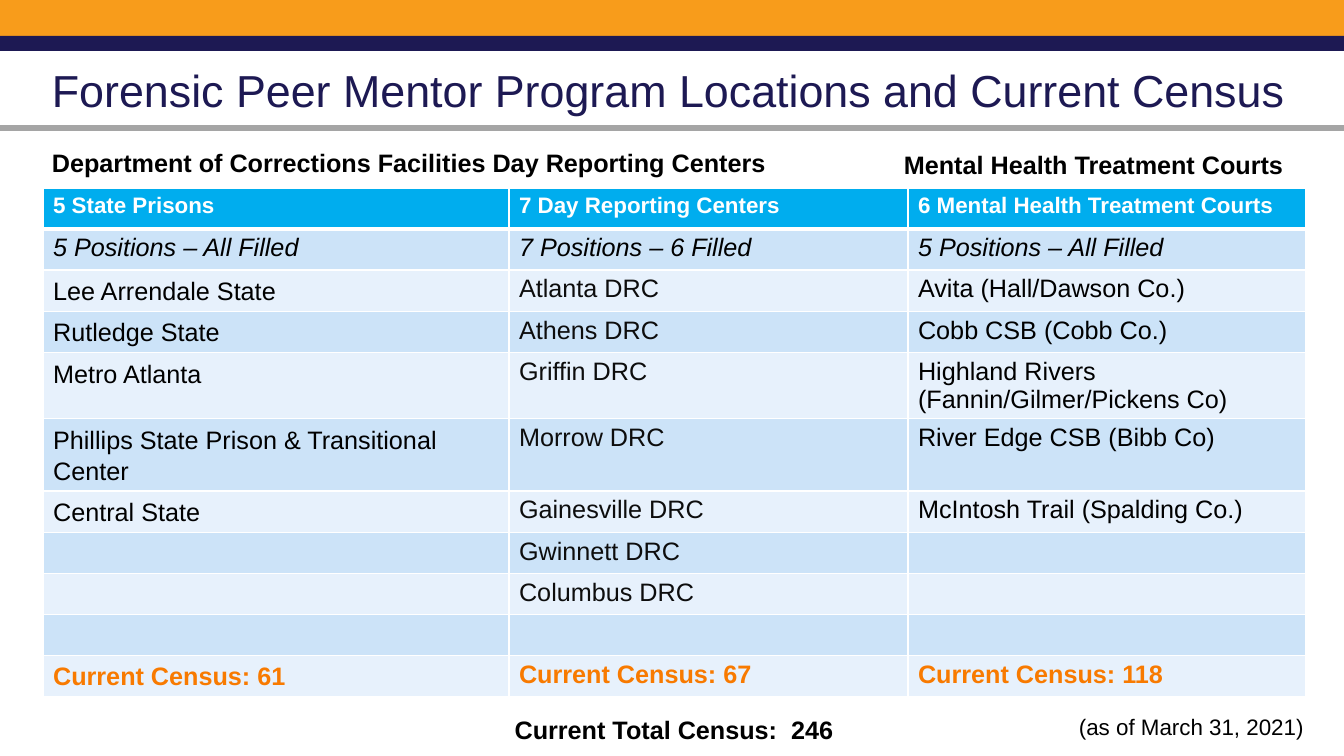
from pptx import Presentation
from pptx.dml.color import RGBColor
from pptx.enum.shapes import MSO_SHAPE as Shape
from pptx.enum.text import MSO_ANCHOR as Anchor, PP_ALIGN as Align
from pptx.oxml import parse_xml
from pptx.oxml.ns import nsdecls
from pptx.util import Pt

EMU_PER_PX = 914400 / 100.8
ORANGE = RGBColor(0xF8, 0x9C, 0x1B)
NAVY = RGBColor(0x1D, 0x19, 0x53)
GRAY = RGBColor(0xA5, 0xA5, 0xA5)
WHITE = RGBColor(0xFF, 0xFF, 0xFF)
BLACK = RGBColor(0, 0, 0)
SOFT_BLACK = RGBColor(0x0D, 0x0D, 0x0D)
HEADER_BLUE = RGBColor(0x00, 0xAD, 0xEE)
BAND_DARK = RGBColor(0xCC, 0xE3, 0xF8)
BAND_LIGHT = RGBColor(0xE7, 0xF1, 0xFC)
CENSUS_ORANGE = RGBColor(0xF8, 0x7A, 0x00)

COLUMN_WIDTHS = [466, 399, 398]
ROW_HEIGHTS = [41, 41, 41, 41, 66, 72, 41, 41, 41, 41, 41]
LOCATIONS = [
    ("5 State Prisons", "7 Day Reporting Centers", "6 Mental Health Treatment Courts"),
    ("5 Positions – All Filled", "7 Positions – 6 Filled", "5 Positions – All Filled"),
    ("Lee Arrendale State", "Atlanta DRC", "Avita (Hall/Dawson Co.)"),
    ("Rutledge State", "Athens DRC", "Cobb CSB (Cobb Co.)"),
    ("Metro Atlanta", "Griffin DRC", "Highland Rivers (Fannin/Gilmer/Pickens Co)"),
    ("Phillips State Prison & Transitional Center", "Morrow DRC", "River Edge CSB (Bibb Co)"),
    ("Central State", "Gainesville DRC", "McIntosh Trail (Spalding Co.)"),
    ("", "Gwinnett DRC", ""),
    ("", "Columbus DRC", ""),
    ("", "", ""),
    ("Current Census: 61", "Current Census: 67", "Current Census: 118"),
]


def px(length):
    """Turn pixels into EMU."""
    return round(length * EMU_PER_PX)


def style_font(para, size, color, bold=False, italic=False):
    """Set the font of a paragraph."""
    font = para.font
    font.name, font.size = "Arial", Pt(size)
    font.bold, font.italic = bold, italic
    font.color.rgb = color


def add_band(page, top, height, color):
    """Draw a plain band across the page."""
    band = page.shapes.add_shape(Shape.RECTANGLE, 0, px(top), px(1344), px(height))
    band.shadow.inherit = False
    band.fill.solid()
    band.fill.fore_color.rgb = color
    band.line.fill.background()


def add_text(page, bounds, text, size=18, color=BLACK, bold=True, align=Align.LEFT):
    """Add a one-line text box and return it."""
    box = page.shapes.add_textbox(*map(px, bounds))
    box.text_frame.word_wrap = False
    para = box.text_frame.paragraphs[0]
    para.text, para.alignment = text, align
    style_font(para, size, color, bold)
    return box


def add_title(page, text):
    """Add the page title, centred vertically in its box."""
    frame = add_text(page, (42, 42, 1263, 101), text, 32, NAVY, False).text_frame
    frame.vertical_anchor = Anchor.MIDDLE
    frame.paragraphs[0].line_spacing = 0.9


def set_borders(cell, bottom):
    """Give a cell white borders, with the bottom one in points."""
    properties = cell._tc.get_or_add_tcPr()
    for index, (side, points) in enumerate([("L", 1), ("R", 1), ("T", 1), ("B", bottom)]):
        properties.insert(index, parse_xml(
            f'<a:ln{side} {nsdecls("a")} w="{Pt(points)}"><a:solidFill>'
            f'<a:srgbClr val="{WHITE}"/></a:solidFill></a:ln{side}>'))


def fill_cell(cell, text, row, column):
    """Write and style one cell by its place in the table."""
    header, last = row == 0, row == len(LOCATIONS) - 1
    cell.fill.solid()
    cell.fill.fore_color.rgb = HEADER_BLUE if header else BAND_DARK if row % 2 else BAND_LIGHT
    set_borders(cell, 3 if header else 1)
    para = cell.text_frame.paragraphs[0]
    para.text = text
    if header:
        color = WHITE
    elif last:
        color = CENSUS_ORANGE
    else:
        color = SOFT_BLACK if column == 1 and row > 1 else BLACK
    style_font(para, 16 if header else 18, color, header or last, row == 1)
    if column == 0 and row > 1 and text:
        para.line_spacing = 1.1


def add_locations(page):
    """Add the table of program locations."""
    bounds = 43, 188, sum(COLUMN_WIDTHS), sum(ROW_HEIGHTS)
    table = page.shapes.add_table(len(LOCATIONS), 3, *map(px, bounds)).table
    for column, width in zip(table.columns, COLUMN_WIDTHS):
        column.width = px(width)
    for row, height in zip(table.rows, ROW_HEIGHTS):
        row.height = px(height)
    for row, texts in enumerate(LOCATIONS):
        for column, text in enumerate(texts):
            fill_cell(table.cell(row, column), text, row, column)


def main():
    """Build the census slide."""
    deck = Presentation()
    deck.slide_width, deck.slide_height = px(1344), px(756)
    page = deck.slides.add_slide(deck.slide_layouts[6])
    add_band(page, 0, 40, ORANGE)
    add_band(page, 36, 15, NAVY)
    add_band(page, 125, 6, GRAY)
    add_locations(page)
    add_title(page, "Forensic Peer Mentor Program Locations and Current Census")
    add_text(page, (42, 142, 742, 40), "Department of Corrections Facilities Day Reporting Centers")
    add_text(page, (894, 144, 410, 40), "Mental Health Treatment Courts")
    add_text(page, (503, 709, 342, 40), "Current Total Census:  246", align=Align.CENTER)
    add_text(page, (1069, 708, 248, 37), "(as of March 31, 2021)", 16, bold=False)
    deck.save("out.pptx")


if __name__ == "__main__":
    main()
